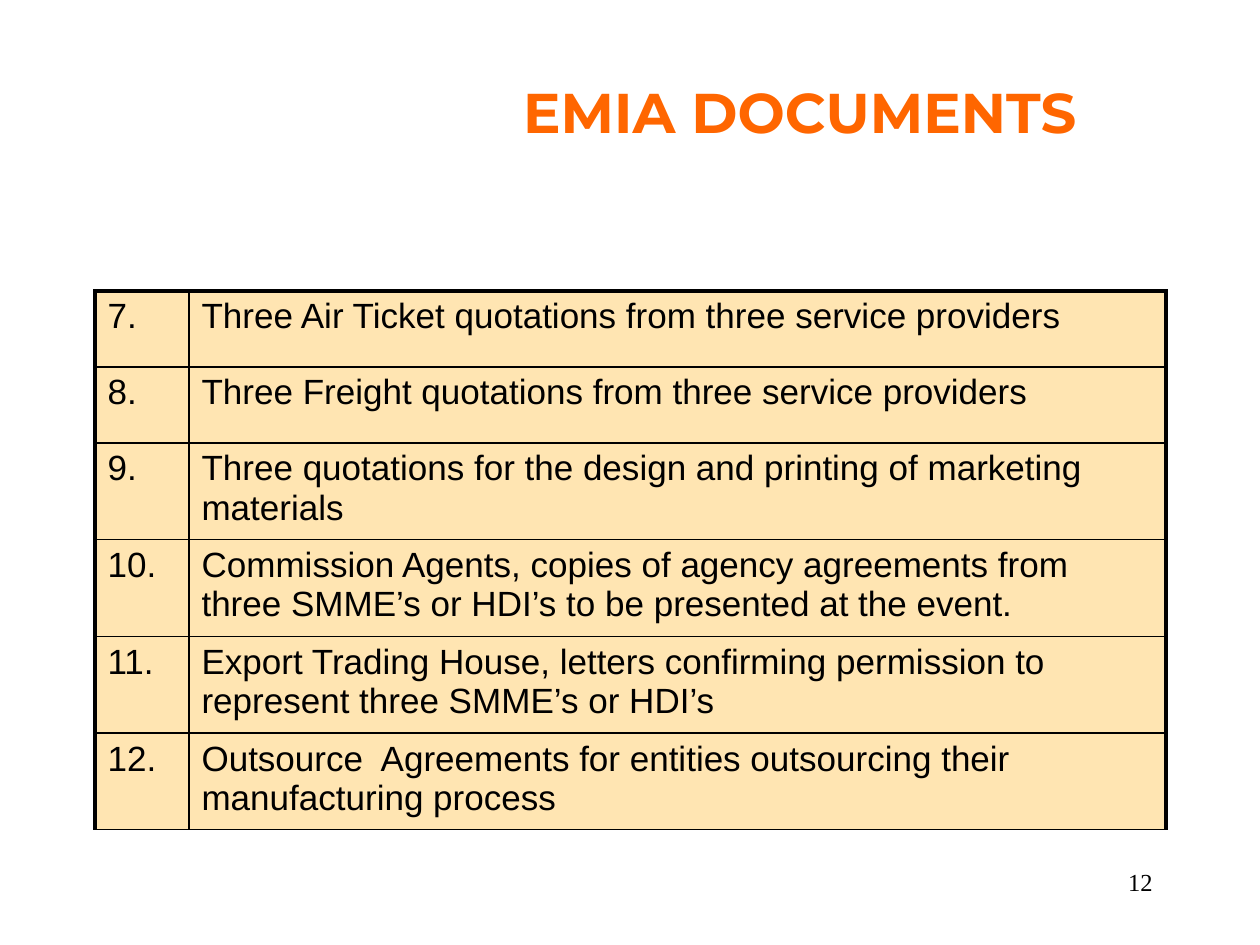
from lxml import etree
from pptx import Presentation
from pptx import util as u
from pptx.dml import color
from pptx.enum import text
from pptx.oxml import ns

SCALE = 914400 / 126  # EMU per px


def px(n):
    return u.Emu(round(n * SCALE))


def rgb(hex_code):
    return color.RGBColor.from_string(hex_code)


deck = Presentation()
deck.slide_width, deck.slide_height = px(1260), px(945)
slide = deck.slides.add_slide(deck.slide_layouts[6])

# Title and page number
for words, box, align, anchor, font, size, hue, bold in (
    ("EMIA DOCUMENTS", (343, 32, 914, 158), text.PP_ALIGN.CENTER,
     text.MSO_ANCHOR.MIDDLE, "Montserrat", 32, "FF6600", True),
    ("12", (903, 861, 262, 63), text.PP_ALIGN.RIGHT,
     text.MSO_ANCHOR.TOP, "Times New Roman", 14, "000000", False),
):
    frame = slide.shapes.add_textbox(*map(px, box)).text_frame
    frame.word_wrap = True
    frame.vertical_anchor = anchor
    line = frame.paragraphs[0]
    line.text = words
    line.alignment = align
    line.font.name, line.font.size, line.font.bold = font, u.Pt(size), bold
    line.font.color.rgb = rgb(hue)

# Documents table
documents = [
    "Three Air Ticket quotations from three service providers",
    "Three Freight quotations from three service providers",
    "Three quotations for the design and printing of marketing materials",
    "Commission Agents, copies of agency agreements from three SMME’s or HDI’s to be presented at the event.",
    "Export Trading House, letters confirming permission to represent three SMME’s or HDI’s",
    "Outsource  Agreements for entities outsourcing their manufacturing process",
]
FIRST_NUMBER = 7
row_heights = [76, 76, 91, 91, 91, 91]
column_widths = [94, 977]
table = slide.shapes.add_table(
    len(documents), 2, px(95), px(291),
    px(sum(column_widths)), px(sum(row_heights))).table
table.first_row = table.horz_banding = False
for column, width in zip(table.columns, column_widths):
    column.width = px(width)

for r, document in enumerate(documents):
    table.rows[r].height = px(row_heights[r])
    for c, words in enumerate((f"{FIRST_NUMBER + r}.", document)):
        cell = table.cell(r, c)
        cell.text = words
        font = cell.text_frame.paragraphs[0].font
        font.name, font.size = "Arial", u.Pt(20)
        font.color.rgb = rgb("000000")

        # Half-transparent fill
        cell.fill.solid()
        cell.fill.fore_color.rgb = rgb("FFCC66")
        properties = cell._tc.get_or_add_tcPr()
        tint = properties.find(".//" + ns.qn("a:srgbClr"))
        etree.SubElement(tint, ns.qn("a:alpha"), val="50000")

        # Borders: heavy on the left, right and top outer edges
        heavy_edges = {"L": c == 0, "R": c == 1, "T": r == 0, "B": False}
        for place, (side, heavy) in enumerate(heavy_edges.items()):
            border = etree.Element(ns.qn(f"a:ln{side}"),
                                   w=str(u.Pt(2.25 if heavy else 1)))
            ink = etree.SubElement(border, ns.qn("a:solidFill"))
            etree.SubElement(ink, ns.qn("a:srgbClr"), val="000000")
            properties.insert(place, border)

deck.save("out.pptx")
